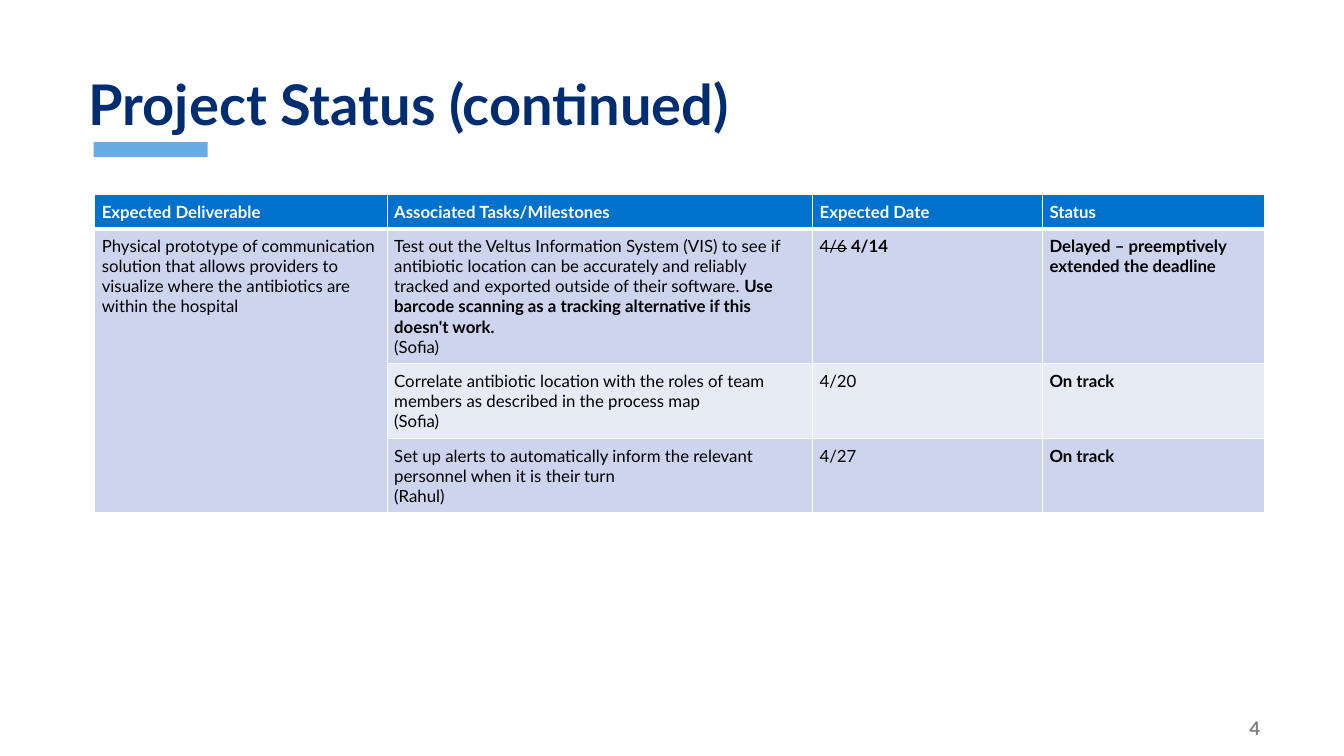
from pptx import Presentation
from pptx.dml.color import RGBColor
from pptx.enum.shapes import MSO_SHAPE
from pptx.enum.text import MSO_ANCHOR, PP_ALIGN
from pptx.oxml import parse_xml
from pptx.oxml.ns import nsdecls
from pptx.util import Inches, Pt

FONT = "Lato"
NAVY, BLUE, SKY, GRAY = "002D72", "0072CE", "69ACE5", "808080"
WHITE, BLACK, BAND_DARK, BAND_LIGHT = "FFFFFF", "000000", "CCD5ED", "E7EBF6"

TITLE = "Project Status (continued)"
PAGE_NUMBER = "4"
HEADERS = ["Expected Deliverable", "Associated Tasks/Milestones", "Expected Date", "Status"]
DELIVERABLE = (
    "Physical prototype of communication solution that allows providers to "
    "visualize where the antibiotics are within the hospital"
)
VIS_TASK = (
    "Test out the Veltus Information System (VIS) to see if antibiotic location can be "
    "accurately and reliably tracked and exported outside of their software. "
)
VIS_FALLBACK = "Use barcode scanning as a tracking alternative if this doesn't work."
ROLES_TASK = (
    "Correlate antibiotic location with the roles of team members "
    "as described in the process map"
)
ALERTS_TASK = (
    "Set up alerts to automatically inform the relevant personnel when it is their turn"
)

PLAIN, BOLD, STRUCK = "plain", "bold", "struck"
ROWS = [
    [[[(header, BOLD)]] for header in HEADERS],
    [
        [[(DELIVERABLE, PLAIN)]],
        [[(VIS_TASK, PLAIN), (VIS_FALLBACK, BOLD)], [("(Sofia)", PLAIN)]],
        [[("4/6", STRUCK), (" ", PLAIN), ("4/14", BOLD)]],
        [[("Delayed – preemptively extended the deadline", BOLD)]],
    ],
    [
        [],
        [[(ROLES_TASK, PLAIN)], [("(Sofia)", PLAIN)]],
        [[("4/20", PLAIN)]],
        [[("On track", BOLD)]],
    ],
    [
        [],
        [[(ALERTS_TASK, PLAIN)], [("(Rahul)", PLAIN)]],
        [[("4/27", PLAIN)]],
        [[("On track", BOLD)]],
    ],
]
COLUMN_WIDTHS = [2.9, 4.22, 2.28, 2.2]
LINES_PER_ROW = [1, 5, 3, 3]
LINE_HEIGHT, CELL_MARGIN = 0.2, 0.07
ROW_FILLS = [BLUE, BAND_DARK, BAND_LIGHT, BAND_DARK]


def color(hex_value):
    return RGBColor.from_string(hex_value)


def format_run(run, size, hex_value, style):
    run.font.name = FONT
    run.font.size = Pt(size)
    run.font.color.rgb = color(hex_value)
    run.font.bold = style == BOLD
    if style == STRUCK:
        run._r.get_or_add_rPr().set("strike", "sngStrike")


def add_label(slide, box, text, size, hex_value, anchor, align):
    text_frame = slide.shapes.add_textbox(*map(Inches, box)).text_frame
    text_frame.word_wrap = True
    text_frame.vertical_anchor = anchor
    text_frame.text = text
    paragraph = text_frame.paragraphs[0]
    paragraph.alignment = align
    format_run(paragraph.runs[0], size, hex_value, BOLD)
    return text_frame


def set_borders(cell, widths):
    for side, width in widths.items():
        cell._tc.get_or_add_tcPr().append(parse_xml(
            f'<a:ln{side} {nsdecls("a")} w="{Pt(width)}"><a:solidFill>'
            f'<a:srgbClr val="{WHITE}"/></a:solidFill></a:ln{side}>'
        ))


def fill_cell(cell, paragraphs, row):
    set_borders(cell, {"L": 1, "R": 1, "T": 3 if row == 1 else 1, "B": 3 if row == 0 else 1})
    cell.fill.solid()
    cell.fill.fore_color.rgb = color(ROW_FILLS[row])
    cell.margin_left = cell.margin_right = Inches(CELL_MARGIN)
    cell.margin_top = cell.margin_bottom = Inches(CELL_MARGIN)
    for index, runs in enumerate(paragraphs):
        text_frame = cell.text_frame
        paragraph = text_frame.add_paragraph() if index else text_frame.paragraphs[0]
        for text, style in runs:
            run = paragraph.add_run()
            run.text = text
            format_run(run, 12, BLACK if row else WHITE, style)


def add_status_table(slide):
    heights = [lines * LINE_HEIGHT + 2 * CELL_MARGIN for lines in LINES_PER_ROW]
    box = (0.94, 1.93, sum(COLUMN_WIDTHS), sum(heights))
    table = slide.shapes.add_table(len(ROWS), len(HEADERS), *map(Inches, box)).table
    for column, width in zip(table.columns, COLUMN_WIDTHS):
        column.width = Inches(width)
    for row, height in zip(table.rows, heights):
        row.height = Inches(height)
    for row, cells in enumerate(ROWS):
        for column, paragraphs in enumerate(cells):
            fill_cell(table.cell(row, column), paragraphs, row)
    table.cell(1, 0).merge(table.cell(len(ROWS) - 1, 0))


def main():
    presentation = Presentation()
    presentation.slide_width, presentation.slide_height = Inches(13.33), Inches(7.5)
    slide = presentation.slides.add_slide(presentation.slide_layouts[6])

    accent_box = (0.93, 1.41, 1.13, 0.15)
    accent = slide.shapes.add_shape(MSO_SHAPE.RECTANGLE, *map(Inches, accent_box))
    accent.shadow.inherit = False
    accent.fill.solid()
    accent.fill.fore_color.rgb = color(SKY)
    accent.line.fill.background()

    number = add_label(slide, (11.51, 7.09, 1.16, 0.26), PAGE_NUMBER, 13.3, GRAY,
                       MSO_ANCHOR.MIDDLE, PP_ALIGN.RIGHT)
    number.margin_right = Inches(0.17)
    number.margin_top = number.margin_bottom = 0
    title = add_label(slide, (0.78, 0.16, 11.89, 1.25), TITLE, 40, NAVY,
                      MSO_ANCHOR.BOTTOM, PP_ALIGN.LEFT)
    title.paragraphs[0].line_spacing = 0.9
    add_status_table(slide)
    presentation.save("out.pptx")


if __name__ == "__main__":
    main()
